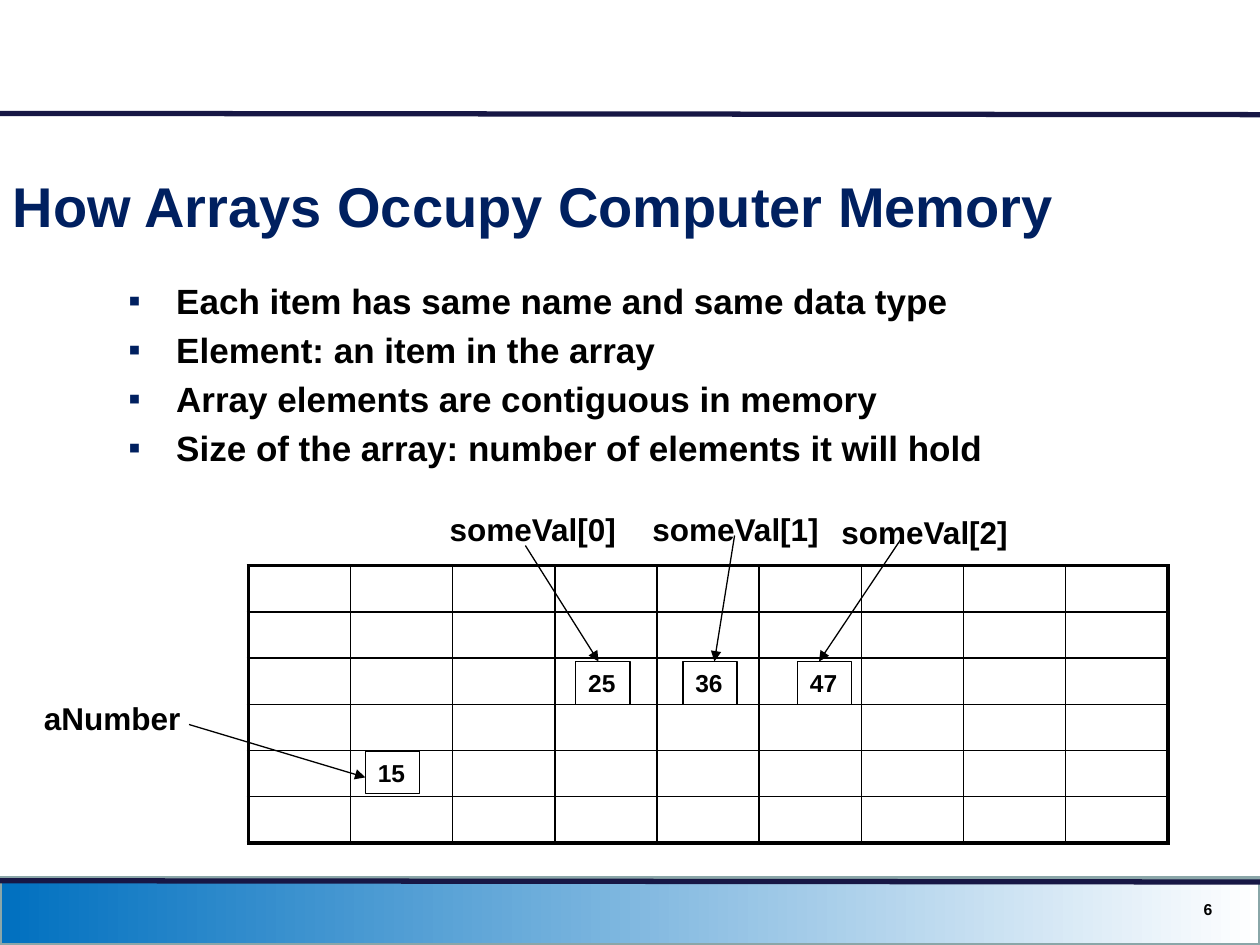
from lxml.etree import SubElement
from pptx import Presentation
from pptx.dml.color import RGBColor
from pptx.enum.shapes import MSO_CONNECTOR, MSO_SHAPE
from pptx.enum.text import MSO_ANCHOR, PP_ALIGN
from pptx.oxml import parse_xml
from pptx.oxml.ns import nsdecls, qn
from pptx.util import Inches, Pt

BLACK = RGBColor(0x00, 0x00, 0x00)
WHITE = RGBColor(0xFF, 0xFF, 0xFF)
NAVY = RGBColor(0x00, 0x20, 0x60)
RULE = RGBColor(0x17, 0x17, 0x45)
BLUE = RGBColor(0x00, 0x70, 0xC0)
GREY = RGBColor(0x8A, 0xA6, 0xA8)


def write(shape, lines, size, color=BLACK, align=PP_ALIGN.LEFT):
    shape.text_frame.text = "\n".join(lines)
    for para in shape.text_frame.paragraphs:
        para.alignment = align
        for span in para.runs:
            span.font.name = "Arial"
            span.font.size = Pt(size)
            span.font.bold = True
            span.font.color.rgb = color


def draw_line(start, end, width, color=BLACK, arrow=False):
    points = [Inches(value) for value in (*start, *end)]
    line = slide.shapes.add_connector(MSO_CONNECTOR.STRAIGHT, *points)
    line.line.color.rgb = color
    line.line.width = Pt(width)
    if arrow:
        SubElement(line.line._get_or_add_ln(), qn("a:tailEnd"), type="triangle")
    SubElement(line._element.spPr, qn("a:effectLst"))


deck = Presentation()
deck.slide_width = Inches(10)
deck.slide_height = Inches(7.5)
slide = deck.slides.add_slide(deck.slide_layouts[5])

footer = slide.shapes.add_shape(
    MSO_SHAPE.RECTANGLE, 0, Inches(6.97), Inches(10), Inches(0.53))
footer.shadow.inherit = False
footer.fill.gradient()
footer.fill.gradient_angle = 0
for stop, color in zip(footer.fill.gradient_stops, (BLUE, WHITE)):
    stop.color.rgb = color
footer.line.color.rgb = GREY
footer.line.width = Pt(2)
draw_line((0, 6.99), (10, 7), 3, RULE)
draw_line((0, 0.9), (10, 0.91), 3, RULE)

title = slide.shapes.title
title.left, title.top = Inches(0), Inches(1.14)
title.width, title.height = Inches(9.58), Inches(0.97)
title.text_frame.vertical_anchor = MSO_ANCHOR.MIDDLE
write(title, ["How Arrays Occupy Computer Memory"], 32, NAVY)

ROWS, COLUMNS = 6, 9
frame = slide.shapes.add_table(
    ROWS, COLUMNS, Inches(1.97), Inches(4.49), Inches(7.3), Inches(2.2))
memory = frame.table
memory.first_row = False
memory.horz_banding = False
for row in range(ROWS):
    for column in range(COLUMNS):
        cell = memory.cell(row, column)
        cell.margin_top = cell.margin_bottom = 0
        outer_edges = {
            "L": column == 0,
            "R": column == COLUMNS - 1,
            "T": row == 0,
            "B": row == ROWS - 1,
        }
        for side, outer in outer_edges.items():
            width = Pt(2.25 if outer else 1)
            cell._tc.get_or_add_tcPr().append(parse_xml(
                f'<a:ln{side} {nsdecls("a")} w="{width}"><a:solidFill>'
                f'<a:srgbClr val="{BLACK}"/></a:solidFill></a:ln{side}>'))
        cell.fill.background()

number = slide.shapes.add_textbox(
    Inches(7.39), Inches(7.07), Inches(2.33), Inches(0.29))
number.text_frame.word_wrap = True
number.text_frame.vertical_anchor = MSO_ANCHOR.MIDDLE
write(number, ["6"], 9, align=PP_ALIGN.RIGHT)

body = slide.shapes.add_textbox(
    Inches(0.92), Inches(2.17), Inches(9.08), Inches(1.58))
body.text_frame.word_wrap = True
write(body, [
    "Each item has same name and same data type",
    "Element: an item in the array",
    "Array elements are contiguous in memory",
    "Size of the array: number of elements it will hold",
], 20)
for index, para in enumerate(body.text_frame.paragraphs):
    if index:
        para.space_before = Pt(4)
    properties = para._p.get_or_add_pPr()
    properties.set("marL", str(Inches(0.38)))
    properties.set("indent", str(-Inches(0.38)))
    bullet_color = SubElement(properties, qn("a:buClr"))
    SubElement(bullet_color, qn("a:srgbClr"), val=str(NAVY))
    SubElement(properties, qn("a:buFont"), typeface="Arial")
    SubElement(properties, qn("a:buChar"), char="▪")

variables = [
    ("aNumber", (0.25, 5.5), 1.35, "15", (2.9, 5.96), (1.5, 5.75), (2.9, 6.17)),
    ("someVal[0]", (3.47, 4), 1.55, "25", (4.57, 5.25), (4.17, 4.33), (4.75, 5.25)),
    ("someVal[1]", (5.08, 4), 1.55, "36", (5.42, 5.25), (5.83, 4.25), (5.67, 5.25)),
    ("someVal[2]", (6.58, 4.02), 1.55, "47", (6.33, 5.25), (7.17, 4.25), (6.5, 5.25)),
]
for name, name_at, name_width, value, value_at, start, end in variables:
    value_box = slide.shapes.add_shape(
        MSO_SHAPE.RECTANGLE, Inches(value_at[0]), Inches(value_at[1]),
        Inches(0.43), Inches(0.34))
    value_box.shadow.inherit = False
    value_box.fill.background()
    value_box.line.color.rgb = BLACK
    value_box.line.width = Pt(0.75)
    value_box.text_frame.word_wrap = False
    write(value_box, [value], 14)

    label = slide.shapes.add_textbox(
        Inches(name_at[0]), Inches(name_at[1]), Inches(name_width), Inches(0.4))
    label.text_frame.word_wrap = False
    write(label, [name], 18)
    draw_line(start, end, 0.75, arrow=True)

deck.save("out.pptx")
